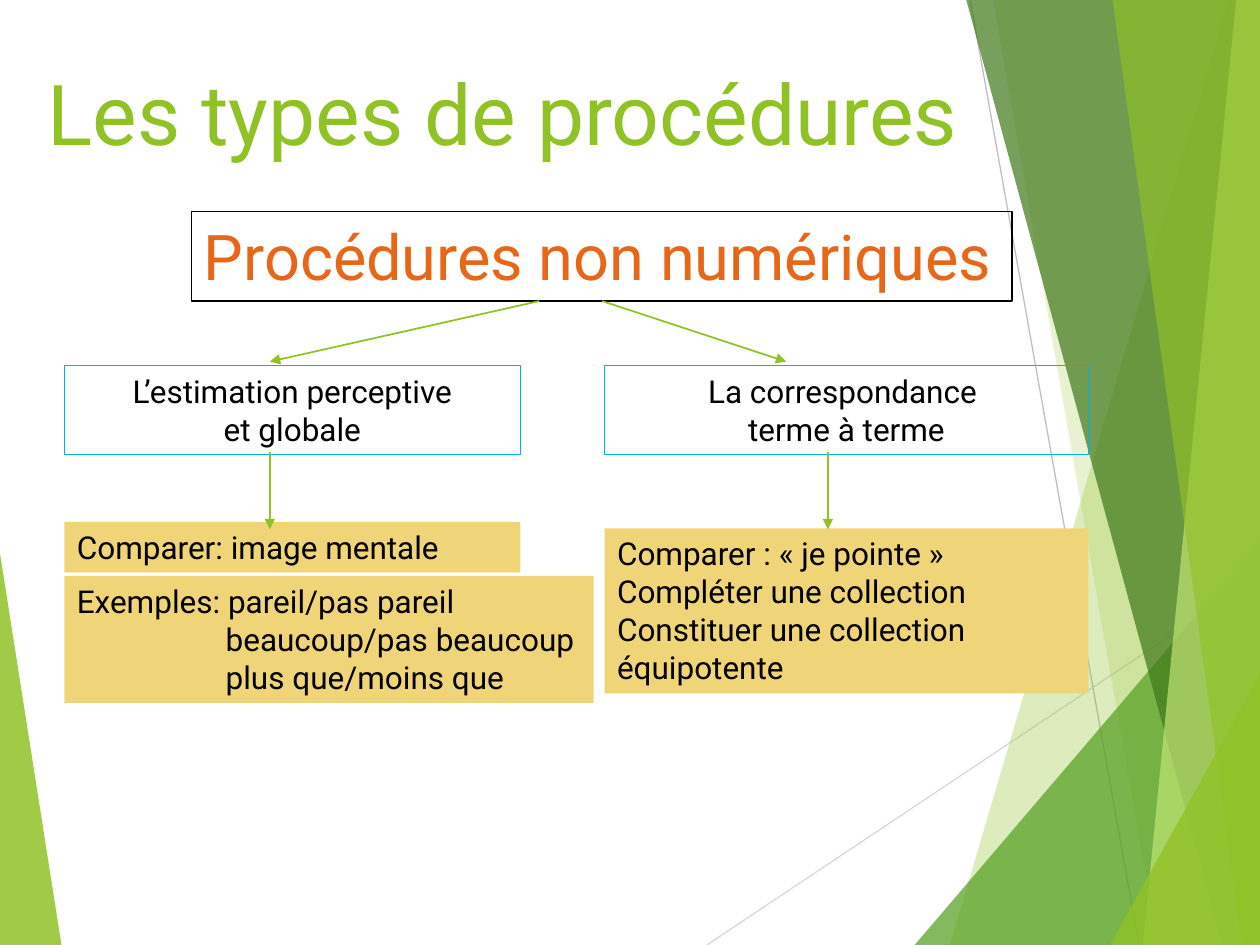
import pptx
import pptx.dml.color
import pptx.enum.shapes
import pptx.enum.text
import pptx.oxml
import pptx.util
from pptx.util import Cm

FONT = "Roboto"
GREEN, BLACK, BLUE, SAND = "90C226", "000000", "00B0F0", "F0D578"
LEFT = pptx.enum.text.PP_ALIGN.LEFT
MID = pptx.enum.text.PP_ALIGN.CENTER


def paint(fill, color, alpha=100):
    """Set a solid fill from a hex string and an opacity in percent."""
    fill.solid()
    fill.fore_color.rgb = pptx.dml.color.RGBColor.from_string(color)
    if alpha < 100:
        node = pptx.oxml.parse_xml(
            '<a:alpha xmlns:a="http://schemas.openxmlformats.org/drawingml/2006/main" '
            f'val="{alpha * 1000}"/>')
        fill._xPr.solidFill[0].append(node)


def write(shape, lines, size, color=BLACK, align=LEFT, hang=0):
    """Write each line as a paragraph, all but the first set in by hang."""
    frame = shape.text_frame
    frame.word_wrap = True
    frame.vertical_anchor = pptx.enum.text.MSO_ANCHOR.TOP
    for i, line in enumerate(lines):
        para = frame.paragraphs[0] if i == 0 else frame.add_paragraph()
        para.alignment = align
        if hang and i:
            para._p.get_or_add_pPr().set("marL", str(Cm(hang)))
        run = para.add_run()
        run.text = line
        run.font.name, run.font.size = FONT, pptx.util.Pt(size)
        paint(run.font.fill, color)


def panel(slide, box, lines, size=18, color=BLACK, fill=None, edge=None,
          align=LEFT, hang=0):
    """Add a text rectangle with an optional fill and edge."""
    shape = slide.shapes.add_shape(
        pptx.enum.shapes.MSO_SHAPE.RECTANGLE, *map(Cm, box))
    shape.shadow.inherit = False
    if fill:
        paint(shape.fill, fill)
    else:
        shape.fill.background()
    if edge:
        paint(shape.line.fill, edge)
        shape.line.width = pptx.util.Pt(0.75)
    else:
        shape.line.fill.background()
    write(shape, lines, size, color, align, hang)


def stroke(slide, start, end, color=GREEN, width=1, head=True):
    """Draw a straight line, with an arrowhead at its end if asked."""
    line = slide.shapes.add_connector(
        pptx.enum.shapes.MSO_CONNECTOR.STRAIGHT, *map(Cm, (*start, *end)))
    paint(line.line.fill, color)
    line.line.width = pptx.util.Pt(width)
    props = line._element.spPr
    if head:
        tip = pptx.oxml.ns.qn("a:tailEnd")
        props.ln.append(props.ln.makeelement(tip, {"type": "triangle"}))
    props.append(props.makeelement(pptx.oxml.ns.qn("a:effectLst"), {}))


def shard(slide, points, color, alpha):
    """Add a see-through polygon."""
    form = slide.shapes.build_freeform(
        *(round(v * 100) for v in points[0]), scale=Cm(0.01))
    form.add_line_segments([(round(x * 100), round(y * 100)) for x, y in points[1:]])
    shape = form.convert_to_shape()
    shape.shadow.inherit = False
    paint(shape.fill, color, alpha)
    shape.line.fill.background()


def decor(slide, box):
    """Lay the green panes and thin lines along the sides of the box."""
    x, y, w, h = box
    right, base = x + w, y + h

    def pane(top, foot, color, alpha):
        """Fill from a slanted edge to the right side."""
        shard(slide, [(x + top, y), (x + foot, base), (right, base), (right, y)],
              color, alpha)

    def wedge(foot, rise, color, alpha):
        """Fill the bottom right corner."""
        shard(slide, [(x + foot, base), (right, base - rise), (right, base)],
              color, alpha)

    shard(slide, [(x, y + 11.15), (x + 1.24, base), (x, base)], GREEN, 85)
    stroke(slide, (x + 14.25, base), (right, y + 11.61), "D9D9D9", 0.75, False)
    stroke(slide, (x + 19.56, y), (x + 22.96, base), "BFBFBF", 0.75, False)
    pane(24.77, 19.15, GREEN, 30)
    pane(20.02, 23.34, GREEN, 20)
    wedge(18.44, 8.15, "54A021", 72)
    pane(19.48, 24.64, "3F7819", 70)
    pane(24.92, 23.04, "C0E474", 70)
    pane(22.43, 25.04, GREEN, 65)
    wedge(22.38, 5.46, GREEN, 80)


def header(slide, box):
    """Place the title and, below it, the framed theme."""
    x, y, w, h = box
    title = slide.shapes.add_textbox(*map(Cm, (x, y, w, 2.79)))
    write(title, ["Les types de procédures"], 48, GREEN)
    panel(slide, (x + 3.15, y + 3.15, 16.54, h - 3.15),
          ["Procédures non numériques"], 36, "E76618", edge=BLACK)


def branch(slide, box, name, notes, start, tip, drop):
    """Place a named branch, its notes and the arrows that lead to them."""
    x, y, w, h = box
    panel(slide, (x, y, w, 1.8), name, edge=BLUE, align=MID)
    for top, wide, tall, lines, hang in notes:
        panel(slide, (x, y + top, wide, tall), lines, fill=SAND, hang=hang)
    stroke(slide, start, (x + tip, y - 0.08))
    stroke(slide, (x + drop, y + 1.75), (x + drop, y + 3.3))


def main():
    """Build and save the slide."""
    deck = pptx.Presentation()
    deck.slide_width, deck.slide_height = Cm(25.4), Cm(19.05)
    slide = deck.slides.add_slide(deck.slide_layouts[6])
    decor(slide, (0, 0, 25.4, 19.05))
    header(slide, (0.71, 1.12, 21.59, 4.95))
    branch(slide, (1.3, 7.37, 9.19, 6.8),
           ["L’estimation perceptive", "et globale"],
           [(3.15, 9.19, 1.02, ["Comparer: image mentale"], 0),
            (4.24, 10.67, 2.56, ["Exemples: pareil/pas pareil",
                                 "beaucoup/pas beaucoup",
                                 "plus que/moins que"], 3)],
           (10.87, 6.07), 4.14, 4.14)
    branch(slide, (12.19, 7.37, 9.75, 6.6),
           ["La correspondance ", "terme à terme"],
           [(3.28, 9.75, 3.33, ["Comparer : «\u00a0je pointe\u00a0»".replace("\u00a0", " "),
                                "Compléter une collection",
                                "Constituer une collection équipotente"], 0)],
           (12.14, 6.07), 3.66, 4.5)
    deck.save("out.pptx")


if __name__ == "__main__":
    main()
